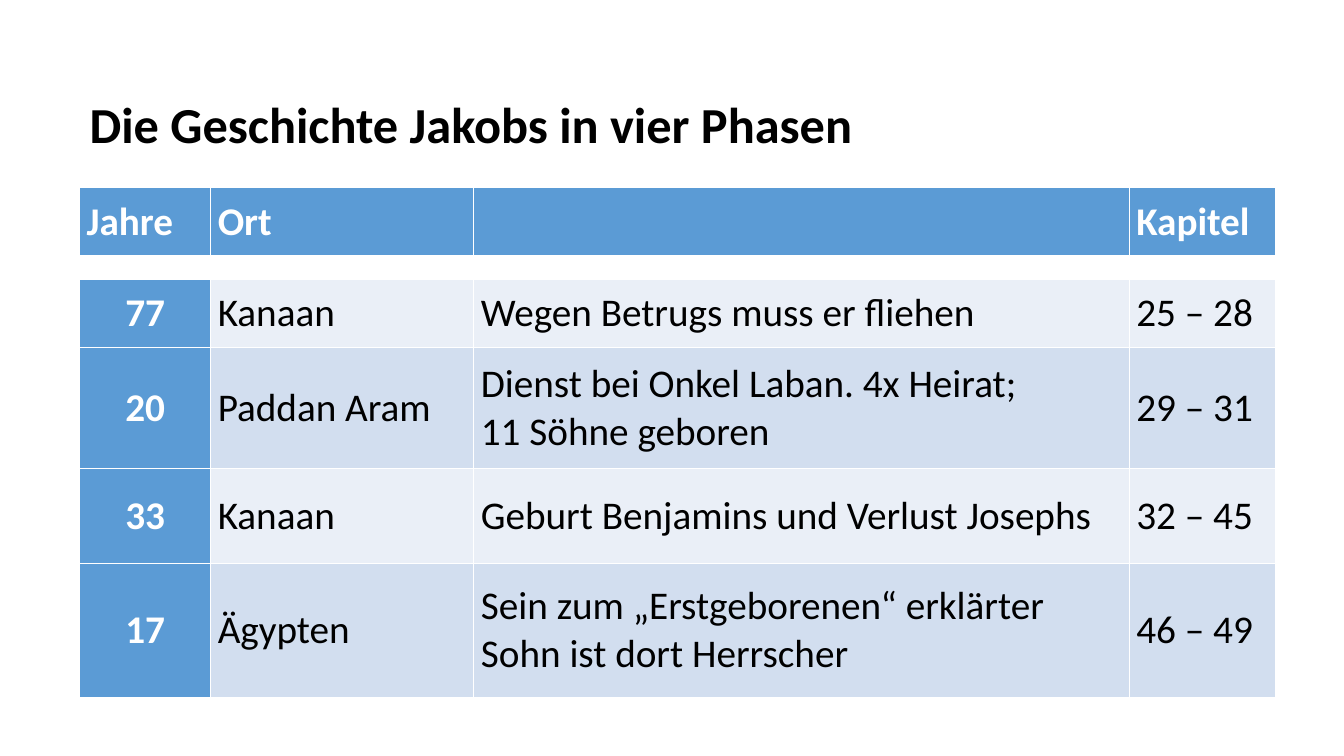
from lxml import etree
from pptx import Presentation
from pptx.dml.color import RGBColor
from pptx.enum.text import MSO_ANCHOR, MSO_AUTO_SIZE, PP_ALIGN
from pptx.oxml.ns import qn
from pptx.util import Inches, Pt

MIDDLE = MSO_ANCHOR.MIDDLE
GROW = MSO_AUTO_SIZE.SHAPE_TO_FIT_TEXT
LEFT, CENTER = PP_ALIGN.LEFT, PP_ALIGN.CENTER

THEME = {
    "font": "Calibri", "title": 36, "body": 28, "gap": 8,
    "ink": "000000", "paper": "FFFFFF", "head": "5B9BD5",
    "bands": ("EAEFF7", "D2DEEF"),
}
MARGIN = 0.79
COLS = (1.3, 2.61, 6.5, 1.45)
ROWS = (0.68, 0.23, 0.68, 1.2, 0.94, 1.33)
PHASES = (
    ("Jahre", "Ort", "", "Kapitel"),
    ("", "", "", ""),
    ("77", "Kanaan", "Wegen Betrugs muss er fliehen", "25 – 28"),
    ("20", "Paddan Aram",
     "Dienst bei Onkel Laban. 4x Heirat;\n11 Söhne geboren", "29 – 31"),
    ("33", "Kanaan", "Geburt Benjamins und Verlust Josephs", "32 – 45"),
    ("17", "Ägypten",
     "Sein zum „Erstgeborenen“ erklärter Sohn ist dort Herrscher", "46 – 49"),
)
HEAD, GAP = 0, 1


def add_run(para, text, size, color, bold):
    run = para.add_run()
    run.text = text
    font = run.font
    font.name, font.size, font.bold = THEME["font"], Pt(size), bold
    font.color.rgb = RGBColor.from_string(color)


def add_borders(cell):
    props = cell._tc.get_or_add_tcPr()
    for place, side in enumerate(("lnL", "lnR", "lnT", "lnB")):
        line = etree.Element(qn("a:" + side), w=str(Pt(1)))
        fill = etree.SubElement(line, qn("a:solidFill"))
        etree.SubElement(fill, qn("a:srgbClr"), val=THEME["paper"])
        props.insert(place, line)


deck = Presentation()
deck.slide_width, deck.slide_height = Inches(13.33), Inches(7.5)
slide = deck.slides.add_slide(deck.slide_layouts[6])

title = slide.shapes.add_textbox(
    Inches(MARGIN), Inches(0.87), Inches(7.85), Inches(0.71)).text_frame
title.word_wrap = False
title.auto_size = GROW
add_run(title.paragraphs[0], "Die Geschichte Jakobs in vier Phasen",
        THEME["title"], THEME["ink"], True)

table = slide.shapes.add_table(
    len(ROWS), len(COLS), Inches(MARGIN), Inches(1.86),
    Inches(sum(COLS)), Inches(sum(ROWS))).table
for col, width in zip(table.columns, COLS):
    col.width = Inches(width)
for row, height in zip(table.rows, ROWS):
    row.height = Inches(height)

for r, phase in enumerate(PHASES):
    for c, text in enumerate(phase):
        cell = table.cell(r, c)
        strong = r == HEAD or c == 0
        if r == GAP:
            fill = THEME["paper"]
        elif strong:
            fill = THEME["head"]
        else:
            fill = THEME["bands"][r % 2]
        cell.fill.solid()
        cell.fill.fore_color.rgb = RGBColor.from_string(fill)
        add_borders(cell)
        cell.vertical_anchor = MIDDLE
        cell.margin_left = cell.margin_right = Inches(0.07)
        cell.margin_top = cell.margin_bottom = 0

        frame = cell.text_frame
        for n, part in enumerate(text.split("\n")):
            para = frame.add_paragraph() if n else frame.paragraphs[0]
            para.alignment = CENTER if c == 0 and r > GAP else LEFT
            if part:
                add_run(para, part, THEME["body"],
                        THEME["paper"] if strong else THEME["ink"], strong)
            else:
                # An empty cell takes its line height from the end mark.
                etree.SubElement(para._p, qn("a:endParaRPr"),
                                 sz=str(THEME["gap"] * 100))

deck.save("out.pptx")
